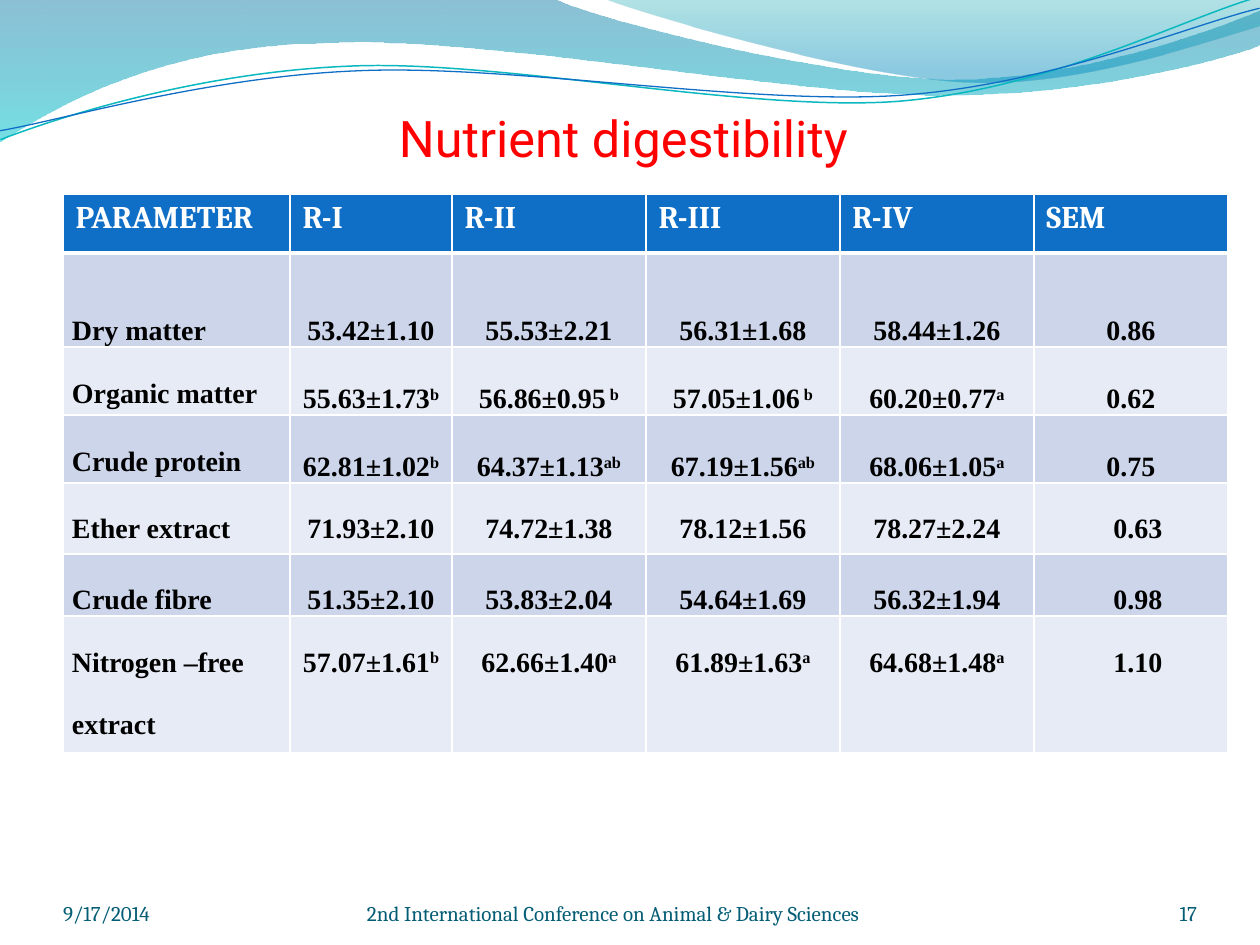
import pptx
import pptx.util
import pptx.dml.color
import pptx.enum.text
from lxml import etree
from pptx.oxml.ns import qn

PX = 914400 / 126
ALIGN = pptx.enum.text.PP_ALIGN
ANCHOR = pptx.enum.text.MSO_ANCHOR
COLORS = {
    "title": "FF0000", "header": "0F6FC6", "white": "FFFFFF", "body": "000000",
    "band_dark": "CCD5EA", "band_light": "E7EBF5", "footer": "045D75",
    "teal": "0AB8BF", "blue": "0F6FC6",
}

# Each segment is one point (straight) or three points (cubic curve).
WAVES = [
    {"start": (0, 0),
     "segments": [[(554, -1)],
                  [(600, 21), (837, 79), (955, 79)],
                  [(1075, 79), (1207, 33), (1260, 11)],
                  [(1261, 45)],
                  [(1239, 55), (1096, 96), (940, 95)],
                  [(784, 95), (481, 35), (324, 43)],
                  [(163, 45), (58, 105), (-1, 142)]],
     "stops": [(0, "0074A1", 45), (1, "00C6CF", 55)]},
    {"start": (604, -1),
     "segments": [[(641, 14), (859, 78), (969, 82)],
                  [(1079, 87), (1211, 40), (1260, 26)],
                  [(1260, 0)]],
     "stops": [(0, "00A1A9", 30), (0.8, "008BBF", 45)]},
    {"start": (-2, 110),
     "segments": [[(58, 90), (199, 52), (350, 53)],
                  [(499, 53), (745, 118), (896, 114)],
                  [(1049, 109), (1184, 45), (1260, 27)]],
     "line": ("teal", 0.85), "rotation": 357.3},
    {"start": (-2, 101),
     "segments": [[(57, 94), (207, 57), (357, 58)],
                  [(509, 58), (750, 112), (902, 108)],
                  [(1052, 104), (1189, 52), (1262, 38)]],
     "line": ("blue", 0.75), "rotation": 357.3},
]

FOOTER = {"name": "Cambria", "size": 12, "color": "footer"}
# Text, box, right inset, alignment, font
TEXTS = [
    ("Nutrient digestibility", (63, 97, 1134, 71), 13, ALIGN.CENTER,
     {"name": "Roboto", "size": 28.8, "color": "title"}),
    ("9/17/2014", (63, 876, 294, 50), 0, ALIGN.LEFT, FOOTER),
    ("2nd International Conference on Animal & Dairy Sciences",
     (367, 876, 714, 50), 0, ALIGN.LEFT, FOOTER),
    ("17", (1092, 876, 105, 50), 0, ALIGN.RIGHT, FOOTER),
]

# A caret marks the start of a superscript.
ROWS = [
    ["PARAMETER", "R-I", "R-II", "R-III", "R-IV", "SEM"],
    ["Dry matter", "53.42±1.10", "55.53±2.21", "56.31±1.68", "58.44±1.26", "0.86"],
    ["Organic matter", "55.63±1.73^b", "56.86±0.95^ b", "57.05±1.06^ b",
     "60.20±0.77^a", "0.62"],
    ["Crude protein", "62.81±1.02^b", "64.37±1.13^ab", "67.19±1.56^ab",
     "68.06±1.05^a", "0.75"],
    ["Ether extract", "71.93±2.10", "74.72±1.38", "78.12±1.56", "78.27±2.24", "0.63"],
    ["Crude fibre", "51.35±2.10", "53.83±2.04", "54.64±1.69", "56.32±1.94", "0.98"],
    ["Nitrogen –free extract", "57.07±1.61^b", "62.66±1.40^a", "61.89±1.63^a",
     "64.68±1.48^a", "1.10"],
]
TABLE_LEFT, TABLE_TOP = 63, 194
COLUMN_WIDTHS = [227, 162, 194, 194, 194, 194]
ROW_HEIGHTS = [59, 94, 68, 68, 71, 62, 137]
HEADER_FONT = {"name": "Cambria", "size": 18, "bold": True, "color": "white"}
BODY_FONT = {"name": "Times New Roman", "size": 16, "bold": True, "color": "body"}


def emu(pixels):
    return pptx.util.Emu(round(pixels * PX))


def rgb(value):
    return pptx.dml.color.RGBColor.from_string(COLORS.get(value, value))


def set_font(font, values):
    for name, value in values.items():
        if name == "color":
            font.color.rgb = rgb(value)
        else:
            setattr(font, name, pptx.util.Pt(value) if name == "size" else value)


def curve_segments(shape, segments):
    """Join the straight steps of each three-point segment into one cubic curve."""
    steps = iter(list(shape._element.iter(qn("a:lnTo"))))
    for segment in segments:
        first, *others = [next(steps) for _ in segment]
        if others:
            first.tag = qn("a:cubicBezTo")
            for step in others:
                first.append(step[0])
                step.getparent().remove(step)


def add_wave(slide, wave):
    # Renaming a parsed element needs a fresh element, so curves are swapped in whole.
    points = [wave["start"], *(point for segment in wave["segments"] for point in segment)]
    points = [(emu(x), emu(y)) for x, y in points]
    builder = slide.shapes.build_freeform(*points[0], scale=1.0)
    builder.add_line_segments(points[1:], close="stops" in wave)
    shape = builder.convert_to_shape()
    curve_segments(shape, wave["segments"])
    shape.shadow.inherit = False
    shape.rotation = wave.get("rotation", 0)
    if "line" in wave:
        color, width = wave["line"]
        shape.fill.background()
        shape.line.color.rgb = rgb(color)
        shape.line.width = pptx.util.Pt(width)
        return
    shape.line.fill.background()
    shape.fill.gradient()
    shape.fill.gradient_angle = 270
    for stop, (position, color, _) in zip(shape.fill.gradient_stops, wave["stops"]):
        stop.position = position
        stop.color.rgb = rgb(color)
    color_elements = shape._element.spPr.iter(qn("a:srgbClr"))
    for element, (_, _, opacity) in zip(color_elements, wave["stops"]):
        etree.SubElement(element, qn("a:alpha"), val=str(opacity * 1000))


def add_text(slide, text, box, right_inset, alignment, font):
    frame = slide.shapes.add_textbox(*map(emu, box)).text_frame
    format_values = {"word_wrap": True, "vertical_anchor": ANCHOR.BOTTOM, "margin_left": 0,
                     "margin_top": 0, "margin_right": emu(right_inset), "margin_bottom": 0}
    for name, value in format_values.items():
        setattr(frame, name, value)
    paragraph = frame.paragraphs[0]
    paragraph.alignment = alignment
    run = paragraph.add_run()
    run.text = text
    set_font(run.font, font)


def add_header_borders(cell):
    properties = cell._tc.get_or_add_tcPr()
    for side, width in {"L": 1, "R": 1, "T": 1, "B": 3}.items():
        line = etree.SubElement(properties, qn(f"a:ln{side}"), w=str(pptx.util.Pt(width)))
        fill = etree.SubElement(line, qn("a:solidFill"))
        etree.SubElement(fill, qn("a:srgbClr"), val=COLORS["white"])


def fill_cell(cell, text, row, column):
    header = row == 0
    if header:
        add_header_borders(cell)
    cell.fill.solid()
    band = "band_dark" if row % 2 else "band_light"
    cell.fill.fore_color.rgb = rgb("header" if header else band)
    paragraph = cell.text_frame.paragraphs[0]
    if not header:
        at_bottom = row == 1 or (row < 4 and column > 0)
        shifted = row > 3 and column == len(COLUMN_WIDTHS) - 1
        format_values = {"margin_left": emu(23 if shifted else 9), "margin_right": emu(9),
                         "margin_top": 0, "margin_bottom": 0,
                         "vertical_anchor": ANCHOR.BOTTOM if at_bottom else ANCHOR.TOP}
        for name, value in format_values.items():
            setattr(cell, name, value)
        paragraph.line_spacing = 2.0
        paragraph.alignment = ALIGN.CENTER if column else ALIGN.LEFT
    for index, part in enumerate(text.split("^")):
        run = paragraph.add_run()
        run.text = part
        set_font(run.font, HEADER_FONT if header else BODY_FONT)
        if index:
            run.font._element.set("baseline", "30000")


def add_digestibility_table(slide):
    box = (TABLE_LEFT, TABLE_TOP, sum(COLUMN_WIDTHS), sum(ROW_HEIGHTS))
    table = slide.shapes.add_table(len(ROWS), len(COLUMN_WIDTHS), *map(emu, box)).table
    for column, width in zip(table.columns, COLUMN_WIDTHS):
        column.width = emu(width)
    for row, height in zip(table.rows, ROW_HEIGHTS):
        row.height = emu(height)
    for row, texts in enumerate(ROWS):
        for column, text in enumerate(texts):
            fill_cell(table.cell(row, column), text, row, column)


def main():
    presentation = pptx.Presentation()
    presentation.slide_width, presentation.slide_height = emu(1260), emu(945)
    slide = presentation.slides.add_slide(presentation.slide_layouts[6])
    for wave in WAVES:
        add_wave(slide, wave)
    add_digestibility_table(slide)
    for text in TEXTS:
        add_text(slide, *text)
    presentation.save("out.pptx")


if __name__ == "__main__":
    main()
